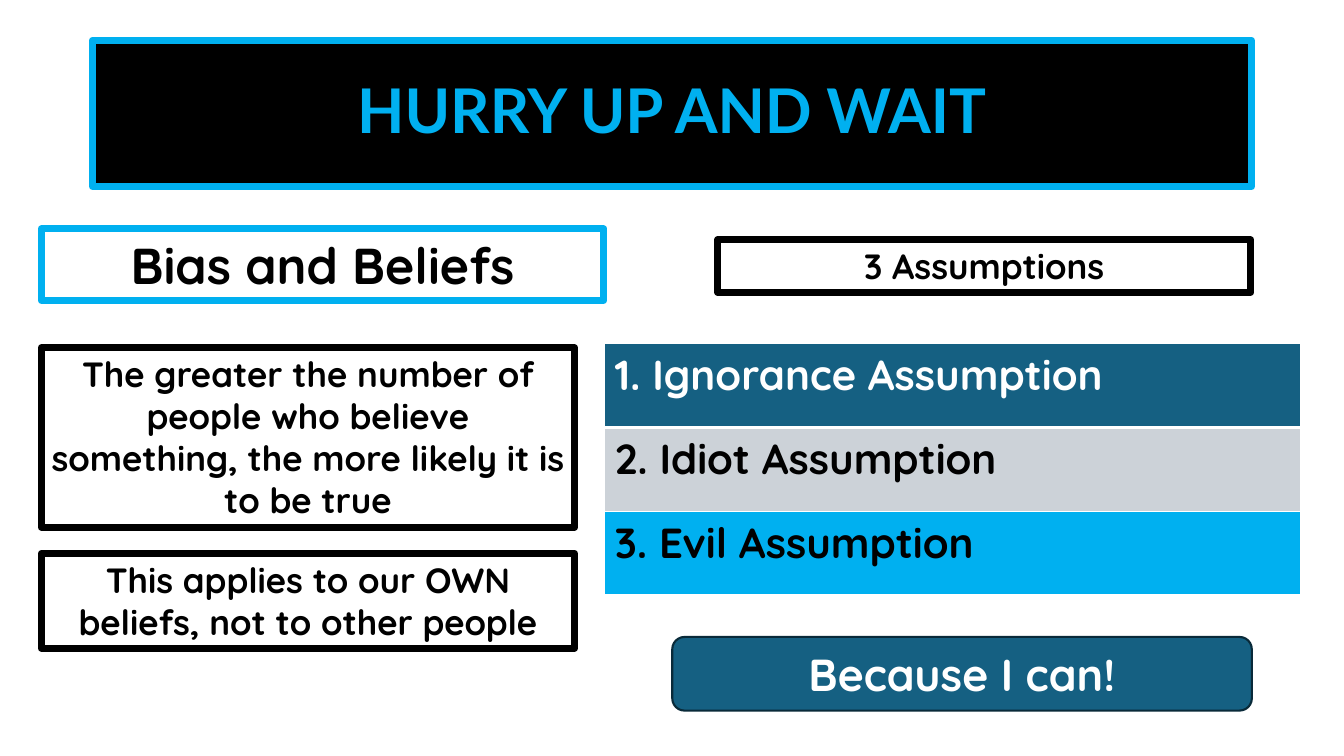
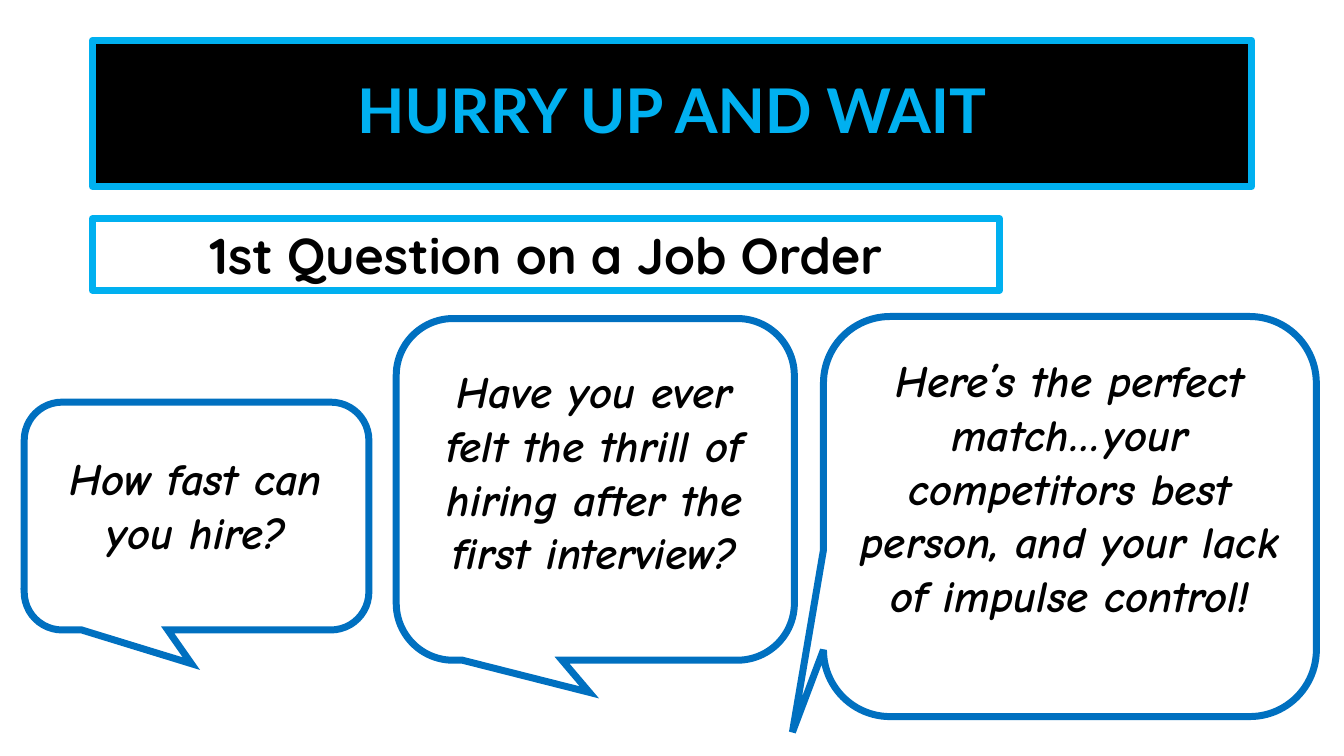
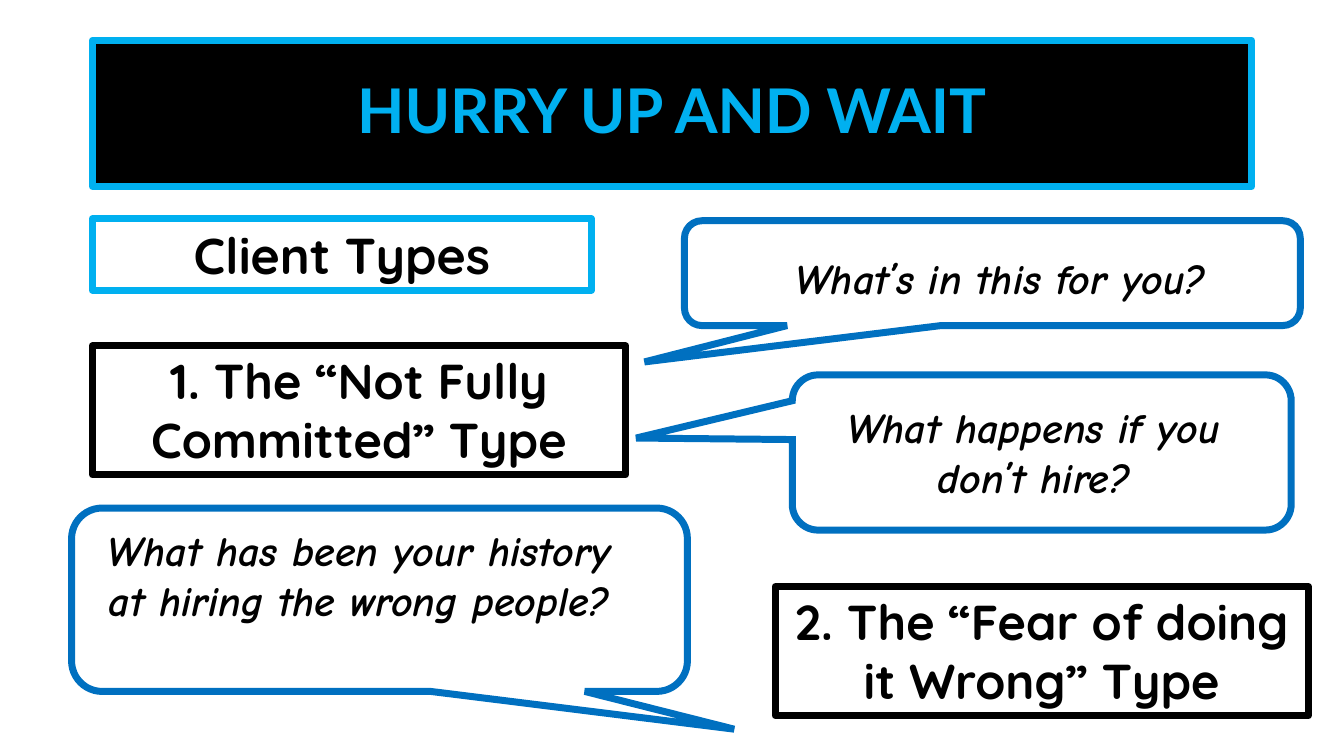
from lxml.etree import SubElement
from pptx import Presentation
from pptx.dml.color import RGBColor
from pptx.enum.shapes import MSO_SHAPE
from pptx.enum.text import MSO_ANCHOR, MSO_AUTO_SIZE, PP_ALIGN
from pptx.oxml import parse_xml
from pptx.oxml.ns import nsdecls, qn
from pptx.util import Pt

COLORS = {
    "black": "000000",
    "white": "FFFFFF",
    "sky": "00B0F0",
    "blue": "0070C0",
    "teal": "156082",
    "navy": "092A39",
    "gray": "CCD2D8",
}
TITLE_FONT, BODY_FONT, SPEECH_FONT = "Lato", "Quicksand", "Comic Neue"
TITLE_BOX = (66, 28.8, 828, 104.4)
BORDER = 5
PANEL_WIDTH = 380.88
HEADING_HEIGHT = 51.1
HEADING_LEFT, HEADING_TOP = 66, 156.2


def color(name):
    return RGBColor.from_string(COLORS[name])


def points(box):
    return [Pt(length) for length in box]


def write(frame, text, font=BODY_FONT, size=25, ink="black", italic=False,
          align=PP_ALIGN.CENTER, anchor=MSO_ANCHOR.TOP, spacing=None):
    """Put one formatted paragraph in a text frame."""
    frame.word_wrap = True
    frame.vertical_anchor = anchor
    para = frame.paragraphs[0]
    para.alignment = align
    if spacing:
        para.line_spacing = spacing
    span = para.add_run()
    span.text = text
    span.font.name = font
    span.font.size = Pt(size)
    span.font.bold = True
    span.font.italic = italic
    span.font.color.rgb = color(ink)


def paint(shape, line, fill=None, width=BORDER):
    if fill:
        shape.fill.solid()
        shape.fill.fore_color.rgb = color(fill)
    else:
        shape.fill.background()
    shape.line.color.rgb = color(line)
    shape.line.width = Pt(width)
    shape.shadow.inherit = False


# Parts shared by the slides
def add_titled_slide(deck, heading, heading_box):
    slide = deck.slides.add_slide(deck.slide_layouts[5])
    title = slide.shapes.title
    title.left, title.top, title.width, title.height = points(TITLE_BOX)
    paint(title, "sky", fill="black")
    title.text_frame.auto_size = MSO_AUTO_SIZE.NONE
    write(title.text_frame, "HURRY UP AND WAIT", font=TITLE_FONT, size=44,
          ink="sky", anchor=MSO_ANCHOR.MIDDLE, spacing=0.9)
    add_panel(slide, heading_box, heading, line="sky", size=36)
    return slide


def add_panel(slide, box, text, line="black", size=25):
    panel = slide.shapes.add_shape(MSO_SHAPE.RECTANGLE, *points(box))
    paint(panel, line)
    write(panel.text_frame, text, size=size)


def add_speech(slide, box, tail, text, text_box, size):
    """Callout in box; tail is its tip, text_box is relative to its corner."""
    left, top, _, _ = box
    callout = slide.shapes.add_shape(
        MSO_SHAPE.ROUNDED_RECTANGULAR_CALLOUT, *points(box))
    callout.adjustments[0], callout.adjustments[1] = tail
    paint(callout, "blue")
    SubElement(callout.line._get_or_add_ln(), qn("a:miter"), lim="800000")
    inset_left, inset_top, width, height = text_box
    words = slide.shapes.add_textbox(
        *points((left + inset_left, top + inset_top, width, height)))
    write(words.text_frame, text, font=SPEECH_FONT, size=size, italic=True)


def set_borders(cell, **widths):
    """Draw white cell borders, named by side in schema order."""
    properties = cell._tc.get_or_add_tcPr()
    for index, (side, width) in enumerate(widths.items()):
        properties.insert(index, parse_xml(
            f'<a:ln{side} {nsdecls("a")} w="{Pt(width)}"><a:solidFill>'
            f'<a:srgbClr val="{COLORS["white"]}"/></a:solidFill></a:ln{side}>'))


def add_assumptions(slide, box, rows):
    table = slide.shapes.add_table(len(rows), 1, *points(box)).table
    for index, (text, fill, ink) in enumerate(rows):
        cell = table.cell(index, 0)
        cell.fill.solid()
        cell.fill.fore_color.rgb = color(fill)
        write(cell.text_frame, text, size=30, ink=ink, align=PP_ALIGN.LEFT)
        set_borders(cell, L=1, R=1, T=3 if index == 1 else 1,
                    B=3 if index == 0 else 1)


def add_button(slide, box, text):
    button = slide.shapes.add_shape(MSO_SHAPE.ROUNDED_RECTANGLE, *points(box))
    paint(button, "navy", fill="teal", width=1.5)
    write(button.text_frame, text, size=32, ink="white",
          anchor=MSO_ANCHOR.MIDDLE)


# Slides
def build_beliefs(deck):
    left = 29.5
    slide = add_titled_slide(deck, "Bias and Beliefs",
                             (left, 163.5, 401.8, HEADING_HEIGHT))
    add_panel(slide, (left, 248.4, PANEL_WIDTH, 128.2),
              "The greater the number of people who believe something, "
              "the more likely it is to be true")
    add_panel(slide, (left, 395.3, PANEL_WIDTH, 67.7),
              "This applies to our OWN beliefs, not to other people")
    add_panel(slide, (512.6, 171.4, PANEL_WIDTH, 37.4), "3 Assumptions")
    add_assumptions(slide, (432, 245.5, 496.8, 179.4), [
        ("1. Ignorance Assumption", "teal", "white"),
        ("2. Idiot Assumption", "gray", "black"),
        ("3. Evil Assumption", "sky", "black"),
    ])
    add_button(slide, (480.2, 455, 414, 52.6), "Because I can!")


def build_job_order(deck):
    slide = add_titled_slide(deck, "1st Question on a Job Order",
                             (HEADING_LEFT, HEADING_TOP, 648, HEADING_HEIGHT))
    speeches = [
        ((17.3, 287.3, 246.2, 162.7), (-0.015, 0.648),
         "How fast can you hire?", (11.5, 31, 222.5, 85)),
        ((283, 227.5, 284.4, 244.1), (-0.015, 0.594),
         "Have you ever felt the thrill of hiring after the first interview?",
         (18.7, 28.8, 246.2, 200.9)),
        ((588.2, 226.1, 352.1, 285.8), (-0.563, 0.539),
         "Here’s the perfect match…your competitors best person, "
         "and your lack of impulse control!", (16.6, 22.3, 319, 239.8)),
    ]
    for speech in speeches:
        add_speech(slide, *speech, size=32)


def build_client_types(deck):
    slide = add_titled_slide(deck, "Client Types",
                             (HEADING_LEFT, HEADING_TOP, 356.4, HEADING_HEIGHT))
    for left, top, text in [
        (HEADING_LEFT, 247, "1. The “Not Fully Committed” Type"),
        (553.7, 419, "2. The “Fear of doing it Wrong” Type"),
    ]:
        add_panel(slide, (left, top, PANEL_WIDTH, 92.2), text, size=35)
    speeches = [
        ((488.9, 157.7, 439.9, 74.9), (-0.565, 0.847),
         "What’s in this for you?", (2.2, 19.4, 447.1, 43.9)),
        ((565.9, 267.8, 356.4, 110.9), (-0.813, -0.093),
         "What happens if you don’t hire?", (10.1, 15.1, 324.7, 79.9)),
        ((51.1, 362.9, 439.9, 131), (0.576, 0.706),
         "What has been your history at hiring the wrong people?",
         (6.5, 7.9, 398.2, 116.6)),
    ]
    for speech in speeches:
        add_speech(slide, *speech, size=30)


def main():
    deck = Presentation()
    deck.slide_width, deck.slide_height = Pt(960), Pt(540)
    build_beliefs(deck)
    build_job_order(deck)
    build_client_types(deck)
    deck.save("out.pptx")


if __name__ == "__main__":
    main()
